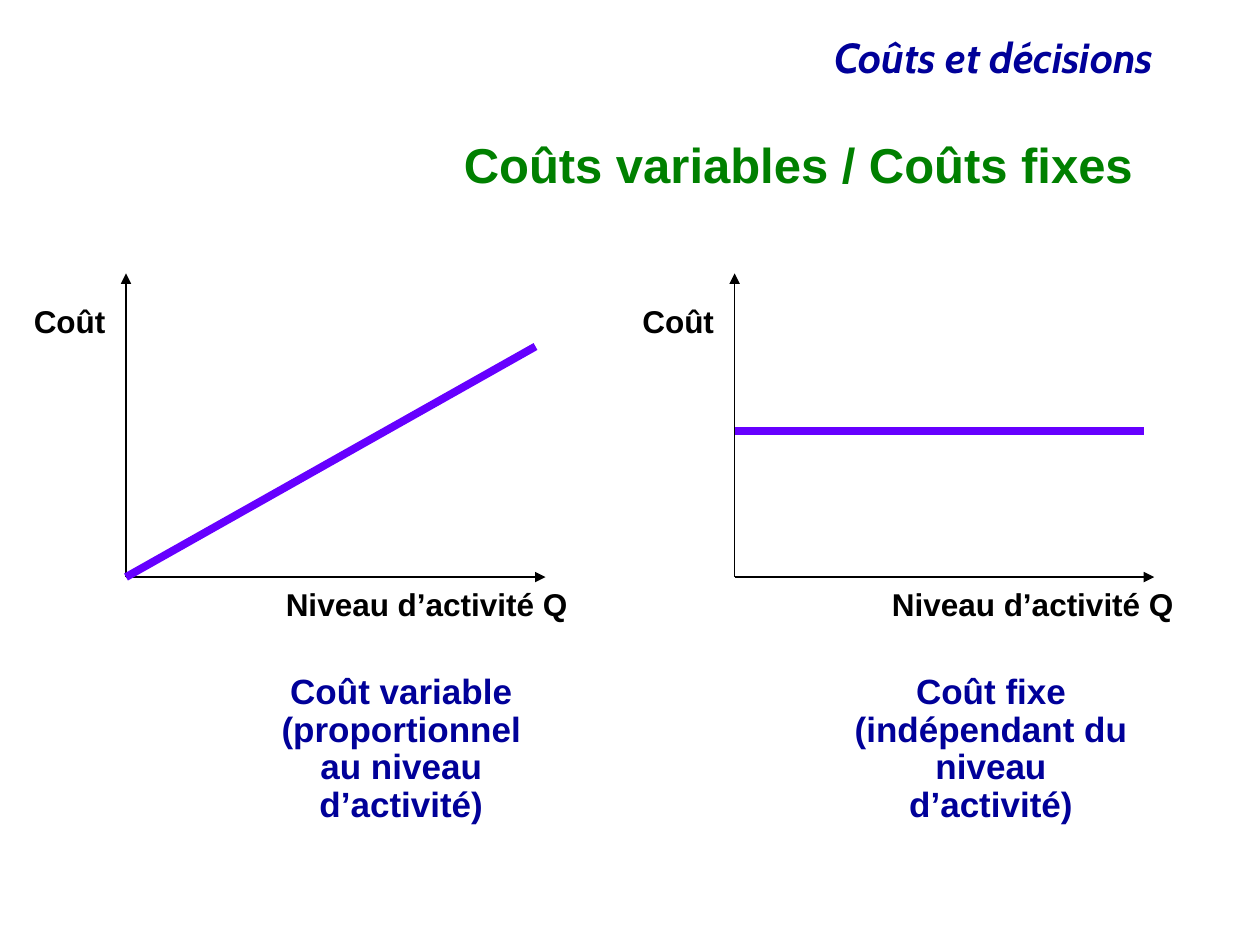
from pptx import Presentation
from pptx.dml.color import RGBColor
from pptx.enum.shapes import MSO_CONNECTOR
from pptx.enum.text import MSO_ANCHOR, MSO_AUTO_SIZE, PP_ALIGN
from pptx.oxml.ns import qn
from pptx.util import Inches, Pt
from lxml.etree import SubElement

BLACK, NAVY, GREEN, VIOLET = "000000", "000099", "008000", "6600FF"
ORIGIN_Y, AXIS_TOP = 4.58, 2.17


def rgb(value):
    return RGBColor.from_string(value)


class CostSlide:
    font = "Arial"
    line_spacing = 0.9

    def __init__(self, deck):
        self.slide = deck.slides.add_slide(deck.slide_layouts[5])

    def fill_frame(self, frame, paragraphs, size, color, align, font=None, italic=False):
        """Fill a text frame; a newline inside a paragraph is a line break."""
        for index, wording in enumerate(paragraphs):
            paragraph = frame.paragraphs[0] if index == 0 else frame.add_paragraph()
            paragraph.alignment = align
            paragraph.line_spacing = self.line_spacing
            paragraph.space_before = Pt(0)
            for number, line in enumerate(wording.split("\n")):
                if number:
                    paragraph.add_line_break()
                run = paragraph.add_run()
                run.text = line
                run.font.name = font or self.font
                run.font.size = Pt(size)
                run.font.bold = True
                run.font.italic = italic
                run.font.color.rgb = rgb(color)

    def title(self, wording, left, top, width, height):
        heading = self.slide.shapes.title
        heading.left, heading.top = Inches(left), Inches(top)
        heading.width, heading.height = Inches(width), Inches(height)
        frame = heading.text_frame
        frame.auto_size = MSO_AUTO_SIZE.NONE
        frame.vertical_anchor = MSO_ANCHOR.MIDDLE
        self.fill_frame(frame, [wording], 28, GREEN, PP_ALIGN.RIGHT)

    def text(self, paragraphs, left, top, width, height, size=18, color=BLACK,
             align=PP_ALIGN.LEFT, wrap=False, inset=0.1, **style):
        box = self.slide.shapes.add_textbox(
            Inches(left), Inches(top), Inches(width), Inches(height))
        frame = box.text_frame
        frame.word_wrap = wrap
        frame.margin_left = frame.margin_right = Inches(inset)
        self.fill_frame(frame, paragraphs, size, color, align, **style)

    def line(self, start, end, color=BLACK, weight=1, arrow=False):
        connector = self.slide.shapes.add_connector(
            MSO_CONNECTOR.STRAIGHT, *(Inches(value) for value in (*start, *end)))
        connector.line.color.rgb = rgb(color)
        connector.line.width = Pt(weight)
        properties = connector._element.spPr
        if arrow:
            SubElement(properties.find(qn("a:ln")), qn("a:tailEnd"), type="triangle")
        SubElement(properties, qn("a:effectLst"))

    def graph(self, x, cost_from, cost_to, activity_left, caption,
              caption_left, caption_width):
        """Draw axes, cost line, axis names and the caption below."""
        self.line((x, ORIGIN_Y), (x, AXIS_TOP), arrow=True)
        self.line((x, ORIGIN_Y), (x + 3.33, ORIGIN_Y), arrow=True)
        self.line((x, cost_from), (x + 3.25, cost_to), VIOLET, 4.5)
        self.text(["Coût"], x - 0.83, 2.38, 0.77, 0.37)
        self.text(["Niveau d’activité Q"], activity_left, 4.63, 2.46, 0.37)
        self.text(caption, caption_left, 5.3, caption_width, 1, size=20,
                  color=NAVY, align=PP_ALIGN.CENTER, wrap=True, inset=0.13)


def main():
    deck = Presentation()
    deck.slide_width, deck.slide_height = Inches(10), Inches(7.5)
    costs = CostSlide(deck)
    costs.text(["Coûts et décisions"], 1.25, 0.25, 8, 0.46, size=24, color=NAVY,
               align=PP_ALIGN.RIGHT, wrap=True, font="Cabin", italic=True)
    costs.title("Coûts variables / Coûts fixes", 1.17, 1.08, 7.92, 0.5)
    costs.graph(1, ORIGIN_Y, 2.75, 2.17,
                ["Coût variable", "(proportionnel\nau niveau d’activité)"], 1.76, 2.85)
    costs.graph(5.83, 3.42, 3.42, 6.98,
                ["Coût fixe", "(indépendant du\nniveau d’activité)"], 6.64, 2.45)
    deck.save("out.pptx")


if __name__ == "__main__":
    main()
